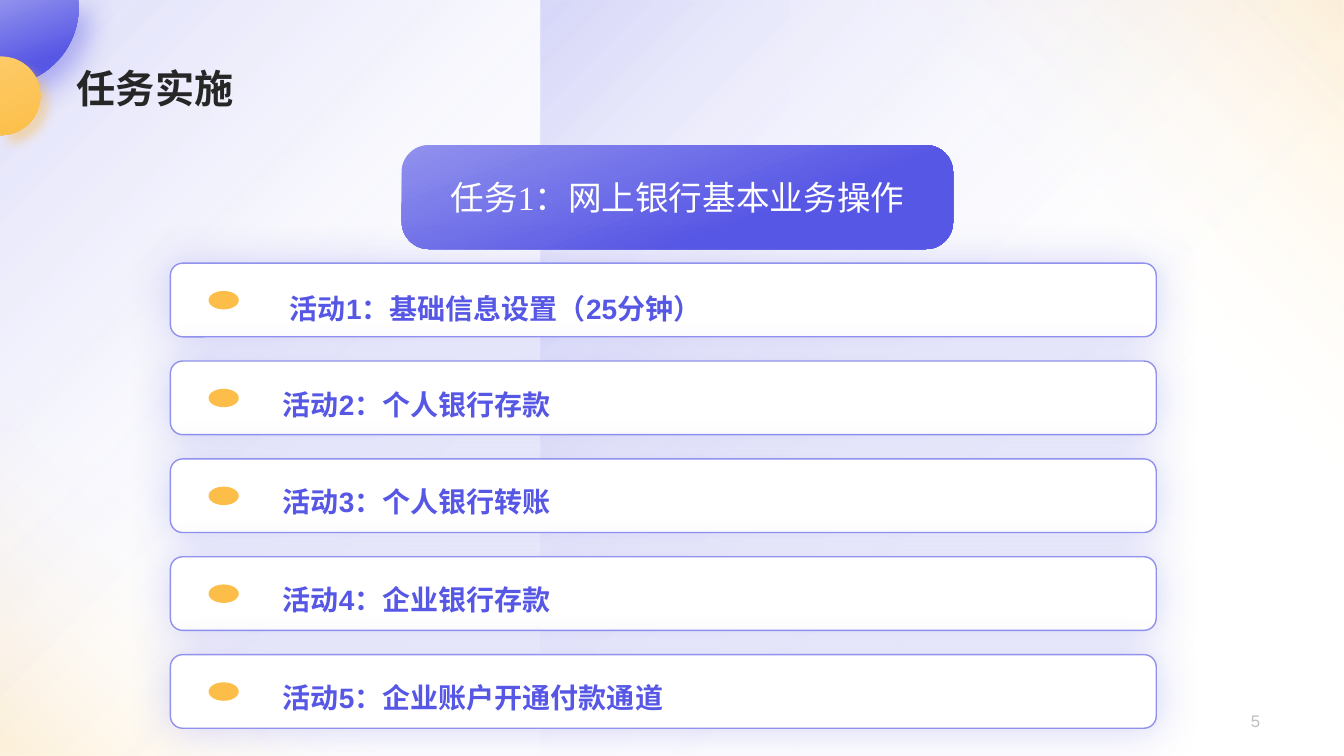
import math
from dataclasses import dataclass

import pptx
import pptx.dml.color
import pptx.enum.shapes
import pptx.enum.text
import pptx.oxml
import pptx.oxml.ns
import pptx.util

Pt = pptx.util.Pt
Shapes = pptx.enum.shapes.MSO_SHAPE
Align = pptx.enum.text.PP_ALIGN
Anchor = pptx.enum.text.MSO_ANCHOR

COLORS = {
    "violet": "5757E5", "lilac": "9191EE", "amber": "FCBE49",
    "light amber": "FDCB67", "white": "FFFFFF", "ink": "262626", "gray": "BFBFBF",
}
NAMESPACE = pptx.oxml.ns.nsdecls("a")


@dataclass(frozen=True)
class Box:
    left: float
    top: float
    width: float
    height: float

    def lengths(self) -> tuple:
        return Pt(self.left), Pt(self.top), Pt(self.width), Pt(self.height)


@dataclass(frozen=True)
class Stop:
    position: int
    color: str
    opacity: int = 100


@dataclass(frozen=True)
class Gradient:
    stops: tuple[Stop, ...]
    angle: int | None = None  # None: radial, centred on the top left corner


@dataclass(frozen=True)
class Shadow:
    color: str
    opacity: int
    blur: float
    distance: float = 0
    angle: int = 0


@dataclass(frozen=True)
class TextStyle:
    size: float
    color: str
    font: str = "Arial"
    bold: bool = False
    align: Align | None = None
    anchor: Anchor = Anchor.TOP


@dataclass(frozen=True)
class Wash:
    box: Box
    gradient: Gradient
    flipped: bool = False


@dataclass(frozen=True)
class Disc:
    center: tuple[float, float]
    radius: float
    start: int
    corners: tuple[tuple[float, float], ...]
    gradient: Gradient
    shadow: Shadow


@dataclass(frozen=True)
class Activity:
    caption: str
    text_left: float = 195
    text_drop: float = 15


VIOLET_GLOW = Gradient((Stop(0, "violet", 20), Stop(65, "white", 0)))
AMBER_GLOW = Gradient((Stop(45, "white", 0), Stop(98, "amber", 20)), 315)
VIOLET_FILL = Gradient((Stop(0, "lilac"), Stop(67, "violet")), 70)
AMBER_FILL = Gradient((Stop(0, "light amber"), Stop(100, "amber")), 70)
CARD_SHADOW = Shadow("violet", 25, 30)

WASHES = (
    Wash(Box(0, 0, 564.5, 540), VIOLET_GLOW),
    Wash(Box(626.2, 0, 333.8, 348.5), AMBER_GLOW),
    Wash(Box(-1.4, 280.8, 288.7, 259.2), AMBER_GLOW, flipped=True),
    Wash(Box(386.4, 0, 573.6, 540), VIOLET_GLOW, flipped=True),
)
DISCS = (
    Disc((0, 5), 56.2, 0, ((0, 0), (55.8, 0)), VIOLET_FILL,
         Shadow("violet", 40, 19, 11, 45)),
    Disc((0.7, 68.4), 28.1, -90, ((0, 96.5), (0, 40.3)), AMBER_FILL,
         Shadow("amber", 40, 7, 8, 45)),
)
ACTIVITIES = (
    Activity("活动1：基础信息设置（25分钟）", 200, 16.5),
    Activity("活动2：个人银行存款"),
    Activity("活动3：个人银行转账"),
    Activity("活动4：企业银行存款"),
    Activity("活动5：企业账户开通付款通道"),
)
CARD_TOP, CARD_PITCH = 188, 69.9


def rgb(name: str) -> pptx.dml.color.RGBColor:
    return pptx.dml.color.RGBColor.from_string(COLORS[name])


def color_xml(name: str, opacity: int) -> str:
    return f'<a:srgbClr val="{COLORS[name]}"><a:alpha val="{opacity * 1000}"/></a:srgbClr>'


def paint_gradient(shape, gradient: Gradient) -> None:
    stops = "".join(f'<a:gs pos="{stop.position * 1000}">{color_xml(stop.color, stop.opacity)}</a:gs>'
                    for stop in gradient.stops)
    if gradient.angle is None:
        course = '<a:path path="circle"><a:fillToRect r="100000" b="100000"/></a:path>'
    else:
        course = f'<a:lin ang="{gradient.angle * 60000}" scaled="0"/>'
    fill = pptx.oxml.parse_xml(f'<a:gradFill {NAMESPACE} rotWithShape="1">'
                               f'<a:gsLst>{stops}</a:gsLst>{course}</a:gradFill>')
    shape.element.spPr.insert(2, fill)  # right after position and geometry


def cast_shadow(shape, shadow: Shadow) -> None:
    effects = shape.element.spPr.find(pptx.oxml.ns.qn("a:effectLst"))
    effects.append(pptx.oxml.parse_xml(
        f'<a:outerShdw {NAMESPACE} blurRad="{Pt(shadow.blur)}" dist="{Pt(shadow.distance)}" '
        f'dir="{shadow.angle * 60000}" algn="ctr" rotWithShape="0">'
        f'{color_xml(shadow.color, shadow.opacity)}</a:outerShdw>'))


def add_plain_shape(shapes, kind: Shapes, box: Box, fill: str | Gradient):
    shape = shapes.add_shape(kind, *box.lengths())
    shape.shadow.inherit = False
    shape.line.fill.background()
    if isinstance(fill, Gradient):
        paint_gradient(shape, fill)
    else:
        shape.fill.solid()
        shape.fill.fore_color.rgb = rgb(fill)
    return shape


def write(shape, text: str, style: TextStyle):
    frame = shape.text_frame
    frame.word_wrap = True
    frame.vertical_anchor = style.anchor
    para = frame.paragraphs[0]
    para.text = text
    para.alignment = style.align
    para.font.size, para.font.name, para.font.bold = Pt(style.size), style.font, style.bold
    para.font.color.rgb = rgb(style.color)
    return para


def add_disc(shapes, disc: Disc) -> None:
    rim = [(disc.center[0] + disc.radius * math.cos(math.radians(angle)),
            disc.center[1] + disc.radius * math.sin(math.radians(angle)))
           for angle in range(disc.start, 91, 3)]
    points = [(Pt(x), Pt(y)) for x, y in (*disc.corners, *rim)]
    builder = shapes.build_freeform(*points[0])
    builder.add_line_segments(points[1:], close=True)
    shape = builder.convert_to_shape()
    shape.shadow.inherit = False
    shape.line.fill.background()
    paint_gradient(shape, disc.gradient)
    cast_shadow(shape, disc.shadow)


def add_card(page, activity: Activity, top: float) -> None:
    shapes = page.shapes.add_group_shape().shapes
    card = add_plain_shape(shapes, Shapes.ROUNDED_RECTANGLE, Box(121.7, top, 704.2, 52.6), "white")
    card.line.color.rgb = rgb("lilac")
    card.line.width = Pt(1)
    cast_shadow(card, CARD_SHADOW)
    caption = shapes.add_textbox(*Box(activity.text_left, top + activity.text_drop, 607, 31.5).lengths())
    write(caption, activity.caption, TextStyle(20, "violet", bold=True))
    add_plain_shape(shapes, Shapes.OVAL, Box(149, top + 19.8, 21.6, 13.2), "amber")


def main() -> None:
    deck = pptx.Presentation()
    deck.slide_width, deck.slide_height = Pt(960), Pt(540)
    page = deck.slides.add_slide(deck.slide_layouts[6])

    # Background glows and corner discs
    for wash in WASHES:
        shape = add_plain_shape(page.shapes, Shapes.RECTANGLE, wash.box, wash.gradient)
        if wash.flipped:
            shape.element.spPr.xfrm.set("flipH", "1")
            shape.element.spPr.xfrm.set("flipV", "1")
    for disc in DISCS:
        add_disc(page.shapes, disc)

    # Title and page number
    title = page.shapes.add_textbox(*Box(52, 46, 428, 39.6).lengths())
    title.text_frame.margin_left = Pt(2.9)
    write(title, "任务实施", TextStyle(28, "ink", bold=True)).line_spacing = 0.9
    number = page.shapes.add_textbox(*Box(691.2, 500.4, 216, 28.8).lengths())
    write(number, "5", TextStyle(12, "gray", align=Align.RIGHT, anchor=Anchor.MIDDLE))

    # Task banner and activity cards
    banner = add_plain_shape(page.shapes, Shapes.ROUNDED_RECTANGLE, Box(287, 103.7, 393.8, 74.2), VIOLET_FILL)
    banner.adjustments[0] = 0.26
    write(banner, "任务1：网上银行基本业务操作",
          TextStyle(24, "white", "Times New Roman", align=Align.CENTER, anchor=Anchor.MIDDLE))
    for index, activity in enumerate(ACTIVITIES):
        add_card(page, activity, CARD_TOP + index * CARD_PITCH)

    deck.save("out.pptx")


if __name__ == "__main__":
    main()
